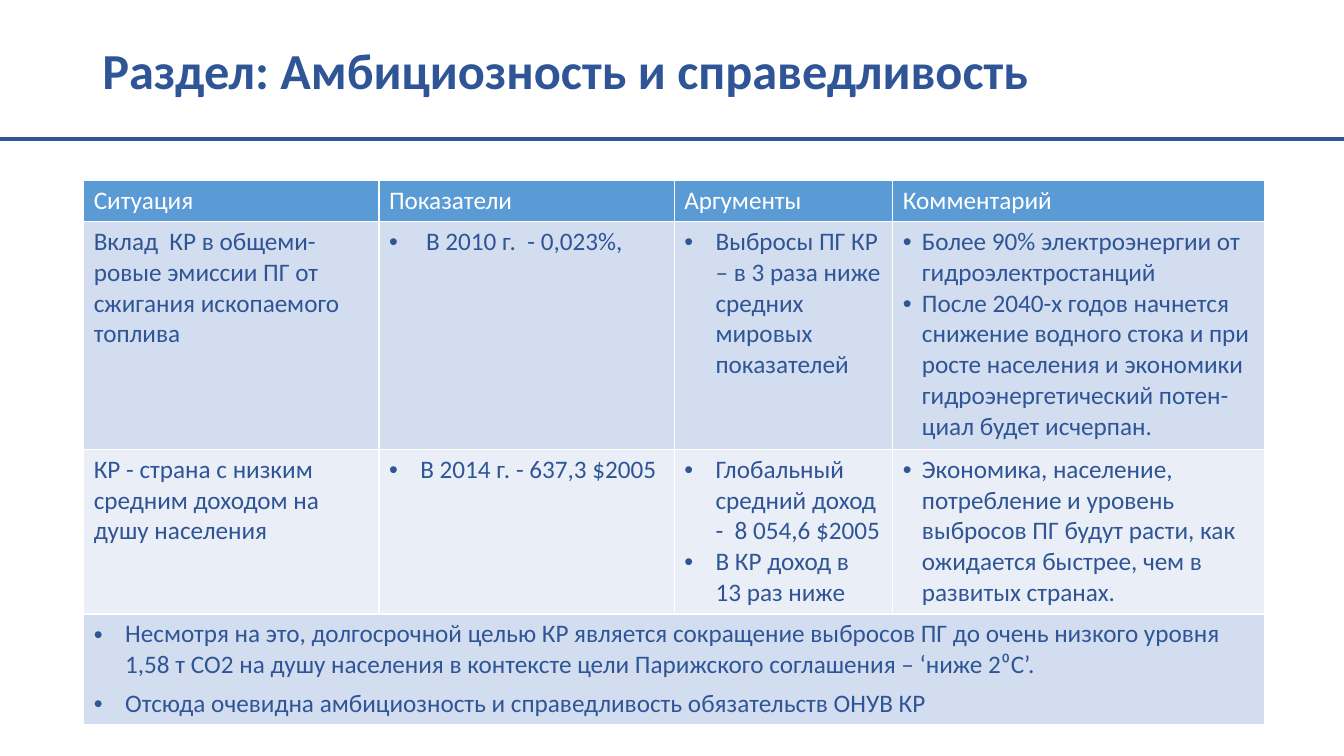
from lxml import etree
from pptx import Presentation
from pptx.dml.color import RGBColor
from pptx.enum.shapes import MSO_CONNECTOR
from pptx.enum.text import MSO_ANCHOR
from pptx.oxml import parse_xml
from pptx.oxml.ns import nsdecls, qn
from pptx.util import Cm, Pt

STRAIGHT = MSO_CONNECTOR.STRAIGHT
MIDDLE = MSO_ANCHOR.MIDDLE
NAVY = RGBColor(0x2F, 0x55, 0x97)
WHITE = RGBColor(0xFF, 0xFF, 0xFF)
HEADER_BLUE = RGBColor(0x5B, 0x9B, 0xD5)
BAND_DARK = RGBColor(0xD2, 0xDE, 0xEF)
BAND_LIGHT = RGBColor(0xEA, 0xEF, 0xF7)
FONT = "Calibri"
WIDE_INDENT = Cm(0.79)
NARROW_INDENT = Cm(0.48)

COLUMN_WIDTHS = [7.44, 7.44, 5.51, 9.37]
ROW_HEIGHTS = [1.03, 5.74, 4.15, 2.8]
ROW_FILLS = [HEADER_BLUE, BAND_DARK, BAND_LIGHT, BAND_DARK]
ROWS = [
    [["Ситуация"], ["Показатели"], ["Аргументы"], ["Комментарий"]],
    [
        ["Вклад  КР в общеми-ровые эмиссии ПГ от сжигания ископаемого топлива"],
        [" В 2010 г.  - 0,023%,"],
        ["Выбросы ПГ КР – в 3 раза ниже средних мировых показателей"],
        [
            "Более 90% электроэнергии от гидроэлектростанций",
            "После 2040-х годов начнется снижение водного стока и при росте "
            "населения и экономики гидроэнергетический потен-циал будет исчерпан.",
        ],
    ],
    [
        ["КР - страна с низким средним доходом на душу населения"],
        ["В 2014 г. - 637,3 $2005"],
        ["Глобальный средний доход -  8 054,6 $2005", "В КР доход в  13 раз ниже"],
        [
            "Экономика, население, потребление и уровень выбросов ПГ будут "
            "расти, как ожидается быстрее, чем в развитых странах."
        ],
    ],
    [
        [
            "Несмотря на это, долгосрочной целью КР является сокращение выбросов "
            "ПГ до очень низкого уровня 1,58 т СО2 на душу населения в контексте "
            "цели Парижского соглашения – ‘ниже 2⁰С’.",
            "Отсюда очевидна амбициозность и справедливость обязательств ОНУВ КР",
        ]
    ],
]


def add_bullet(para, indent):
    properties = para._p.get_or_add_pPr()
    properties.set("marL", str(indent))
    properties.set("indent", str(-indent))
    etree.SubElement(properties, qn("a:buFont")).set("typeface", "Arial")
    etree.SubElement(properties, qn("a:buChar")).set("char", "•")


def add_borders(cell):
    properties = cell._tc.get_or_add_tcPr()
    for side in ("lnL", "lnR", "lnT", "lnB"):
        properties.append(parse_xml(
            f'<a:{side} {nsdecls("a")} w="{Pt(1)}"><a:solidFill>'
            f'<a:srgbClr val="{WHITE}"/></a:solidFill></a:{side}>'
        ))


deck = Presentation()
deck.slide_width = Cm(33.87)
deck.slide_height = Cm(19.05)
page = deck.slides.add_slide(deck.slide_layouts[6])

title_box = page.shapes.add_textbox(Cm(2.33), Cm(0), Cm(29.21), Cm(3.68))
title_box.text_frame.word_wrap = True
title_box.text_frame.vertical_anchor = MIDDLE
title = title_box.text_frame.paragraphs[0]
title.text = "Раздел: Амбициозность и справедливость"
title.line_spacing = 0.9
title.font.name = FONT
title.font.size = Pt(36)
title.font.bold = True
title.font.color.rgb = NAVY

rule = page.shapes.add_connector(STRAIGHT, Cm(0), Cm(3.51), deck.slide_width, Cm(3.51))
rule.line.color.rgb = NAVY
rule.line.width = Pt(3)
etree.SubElement(rule._element.spPr, qn("a:effectLst"))

table = page.shapes.add_table(
    len(ROW_HEIGHTS), len(COLUMN_WIDTHS),
    Cm(2.11), Cm(4.55), Cm(sum(COLUMN_WIDTHS)), Cm(sum(ROW_HEIGHTS)),
).table
for column, width in zip(table.columns, COLUMN_WIDTHS):
    column.width = Cm(width)
for row, height, fill in zip(table.rows, ROW_HEIGHTS, ROW_FILLS):
    row.height = Cm(height)
    for cell in row.cells:
        add_borders(cell)
        cell.fill.solid()
        cell.fill.fore_color.rgb = fill

last_row = len(ROWS) - 1
table.cell(last_row, 0).merge(table.cell(last_row, len(COLUMN_WIDTHS) - 1))

for row_index, row_texts in enumerate(ROWS):
    for column_index, texts in enumerate(row_texts):
        frame = table.cell(row_index, column_index).text_frame
        frame.text = "\n".join(texts)
        for para in frame.paragraphs:
            para.font.name = FONT
            para.font.size = Pt(18)
            para.font.bold = False
            para.font.color.rgb = WHITE if row_index == 0 else NAVY
            if row_index == last_row:
                para.space_after = Pt(6)
            if row_index == last_row or (row_index > 0 and column_index > 0):
                add_bullet(para, NARROW_INDENT if column_index == 3 else WIDE_INDENT)

deck.save("out.pptx")
